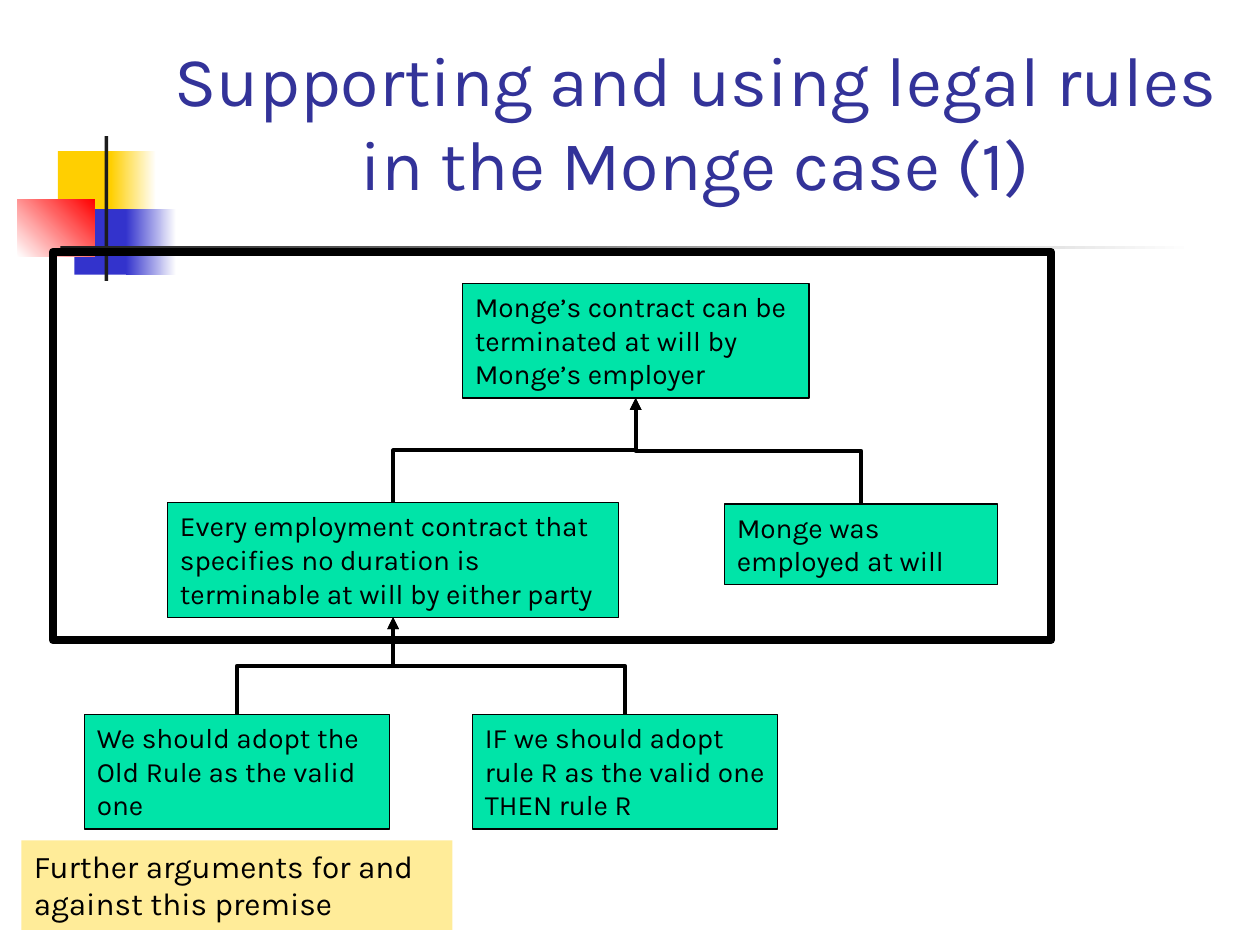
import pptx
import pptx.dml.color
import pptx.enum.shapes
import pptx.enum.text
import pptx.oxml
import pptx.oxml.ns
import pptx.util

Inches = pptx.util.Inches
Pt = pptx.util.Pt
FONT = "Karla"
BLACK = "000000"
GREEN = "00E4A8"

BANDS = [
    ((0.46, 1.2, 0.48, 0.52), "FFCF01", None, 0),
    ((0.88, 1.2, 0.36, 0.52), "FFCF01", "FFFFFF", 0),
    ((0.59, 1.66, 0.46, 0.52), "3333CC", None, 0),
    ((1, 1.66, 0.4, 0.52), "3333CC", "FFFFFF", 0),
    ((0.14, 1.58, 0.61, 0.46), "FFFFFF", "FF0000", 45),
    ((0.83, 1.08, 0.03, 1.15), "1C1C1C", None, 0),
    ((0.48, 1.95, 9, 0.03), "1C1C1C", "FFFFFF", 0),
]

STATEMENTS = {
    "conclusion": ((3.67, 2.25, 2.75, 0.91),
                   "Monge’s contract can be terminated at will by Monge’s employer"),
    "rule": ((1.33, 3.99, 3.58, 0.91),
             "Every employment contract that specifies no duration is terminable at will by either party"),
    "fact": ((5.75, 4, 2.17, 0.64), "Monge was employed at will"),
    "old rule": ((0.67, 5.67, 2.42, 0.91), "We should adopt the Old Rule as the valid one"),
    "adoption": ((3.75, 5.67, 2.42, 0.91),
                 "IF we should adopt rule R as the valid one THEN rule R"),
}

SUPPORTS = [("old rule", "rule"), ("adoption", "rule"),
            ("rule", "conclusion"), ("fact", "conclusion")]


def color(value):
    return pptx.dml.color.RGBColor.from_string(value)


def apply_format(target, values):
    for name, value in values.items():
        setattr(target, name, value)


def add_rectangle(slide, box, fill=None, line_color=None, line_width=0.75):
    rectangle = pptx.enum.shapes.MSO_SHAPE.RECTANGLE
    shape = slide.shapes.add_shape(rectangle, *map(Inches, box))
    shape.shadow.inherit = False
    if fill:
        shape.fill.solid()
        shape.fill.fore_color.rgb = color(fill)
    else:
        shape.fill.background()
    if line_color:
        shape.line.color.rgb = color(line_color)
        shape.line.width = Pt(line_width)
    else:
        shape.line.fill.background()
    return shape


def add_band(slide, box, start, end, angle):
    shape = add_rectangle(slide, box, start)
    if end:
        shape.fill.gradient()
        shape.fill.gradient_angle = angle
        for stop, value, position in zip(shape.fill.gradient_stops, (start, end), (0, 1)):
            stop.color.rgb = color(value)
            stop.position = position


def write_text(shape, text, size, text_color, alignment, anchor):
    frame = shape.text_frame
    apply_format(frame, {"text": text, "word_wrap": True, "vertical_anchor": anchor})
    paragraph = frame.paragraphs[0]
    paragraph.alignment = alignment
    font = paragraph.runs[0].font
    apply_format(font, {"name": FONT, "size": Pt(size)})
    font.color.rgb = color(text_color)


def add_title(slide, text):
    title = slide.shapes.title
    apply_format(title, {"left": Inches(1.26), "top": Inches(0.42),
                         "width": Inches(8.52), "height": Inches(1.25)})
    write_text(title, text, 40, "333399", pptx.enum.text.PP_ALIGN.CENTER,
               pptx.enum.text.MSO_ANCHOR.BOTTOM)
    title.text_frame.auto_size = pptx.enum.text.MSO_AUTO_SIZE.NONE


def add_text_box(slide, box, text, size, fill, line_color=None):
    shape = add_rectangle(slide, box, fill, line_color)
    write_text(shape, text, size, BLACK, pptx.enum.text.PP_ALIGN.LEFT,
               pptx.enum.text.MSO_ANCHOR.TOP)
    shape.text_frame.auto_size = pptx.enum.text.MSO_AUTO_SIZE.SHAPE_TO_FIT_TEXT


def add_support(slide, premise, claim):
    start_x, start_y = premise[0] + premise[2] / 2, premise[1]
    end_x, end_y = claim[0] + claim[2] / 2, claim[1] + claim[3]
    center_x, center_y = (start_x + end_x) / 2, (start_y + end_y) / 2
    side = 1 if end_x > start_x else -1
    half_width = side * (start_y - end_y) / 2
    half_height = abs(end_x - start_x) / 2
    connector = slide.shapes.add_connector(
        pptx.enum.shapes.MSO_CONNECTOR.ELBOW,
        Inches(center_x + half_width), Inches(center_y + half_height),
        Inches(center_x - half_width), Inches(center_y - half_height))
    connector.line.color.rgb = color(BLACK)
    connector.line.width = Pt(2.25)
    properties = connector.element.spPr
    turn = 90 if side == 1 else 270
    properties.find(pptx.oxml.ns.qn("a:xfrm")).set("rot", str(turn * 60000))
    namespace = pptx.oxml.ns.nsdecls("a")
    line = properties.find(pptx.oxml.ns.qn("a:ln"))
    line.append(pptx.oxml.parse_xml(f'<a:tailEnd {namespace} type="triangle"/>'))
    properties.append(pptx.oxml.parse_xml(f"<a:effectLst {namespace}/>"))


def main():
    presentation = pptx.Presentation()
    apply_format(presentation, {"slide_width": Inches(10), "slide_height": Inches(7.5)})
    slide = presentation.slides.add_slide(presentation.slide_layouts[5])
    for band in BANDS:
        add_band(slide, *band)
    add_title(slide, "Supporting and using legal rules in the Monge case (1)")
    for box, text in STATEMENTS.values():
        add_text_box(slide, box, text, 16, GREEN, BLACK)
    for premise, claim in SUPPORTS:
        add_support(slide, STATEMENTS[premise][0], STATEMENTS[claim][0])
    add_rectangle(slide, (0.42, 2, 7.92, 3.08), line_color=BLACK, line_width=4.75)
    add_text_box(slide, (0.17, 6.67, 3.42, 0.71),
                 "Further arguments for and against this premise", 18, "FFEC99")
    presentation.save("out.pptx")


if __name__ == "__main__":
    main()
